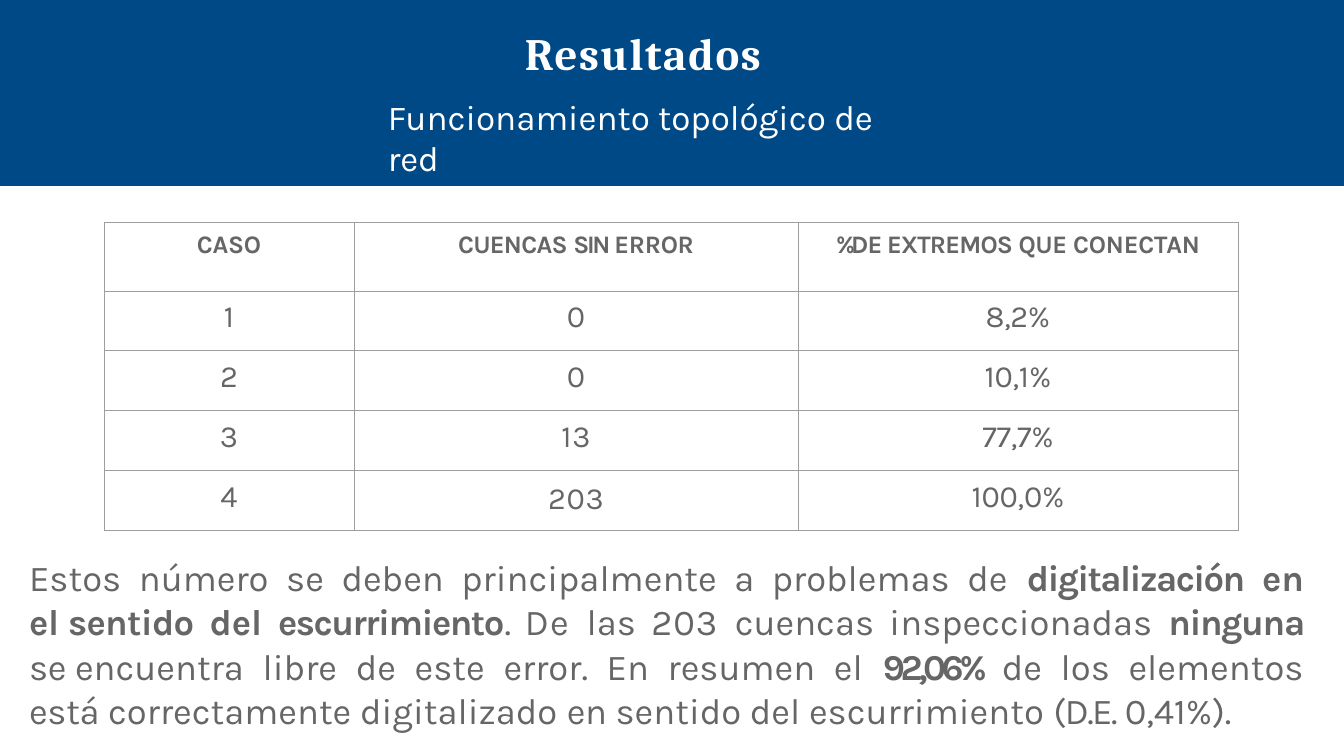
import pptx
import pptx.dml.color
import pptx.enum.shapes
import pptx.enum.text
import pptx.oxml
import pptx.oxml.ns
import pptx.util

ALIGN = pptx.enum.text.PP_ALIGN
HARD_SPACE = chr(160)
SLIDE = (1344, 756)
BAND = (0, 0, 1344, 186)
BLUE, WHITE, GREY, RULE = "004987", "FFFFFF", "666666", "9E9E9E"

TITLE = [("Resultados", True, 1.2)]
TITLE_BOX = (524, 25, 250, 56)
SUBTITLE = [("Funcionamiento topológico de ", False, 0), ("red", False, -0.2)]
SUBTITLE_BOX = (387, 94, 523, 44)

RESULTS_ORIGIN = (104, 222)
COLUMNS = (250, 444, 440)
ROWS = (69, 60, 60, 60, 60)
HEADINGS = [
    [("CASO", True, -0.2)],
    [("CUENCAS ", True, -0.5), ("SIN" + HARD_SPACE, True, -1.7), ("ERROR", True, -0.2)],
    [("%" + HARD_SPACE, True, -7.4), ("DE EXTREMOS ", True, -0.6),
     ("QUE ", True, -0.3), ("CONECTAN", True, -0.1)],
]
RESULTS = [
    [("1", 0.2), ("0", 0.2), ("8,2%", -0.2)],
    [("2", 0.2), ("0", 0.2), ("10,1%", -0.1)],
    [("3", 0.2), ("13", 0.5), ("77,7%", -0.1)],
    [("4", 0.2), ("203", 0.5), ("100,0%", -0.1)],
]

SUMMARY = [
    ("Estos número se deben principalmente a problemas de ", False, 0),
    ("digitalización ", True, -1.2), ("en ", True, 0), ("el" + HARD_SPACE, True, -0.2),
    ("sentido ", True, -0.5), ("del ", True, 0), ("escurrimiento", True, -1.1),
    (". ", False, -1.1), ("De ", False, 0.9), ("las ", False, 0), ("203 ", False, 0.7),
    ("cuencas inspeccionadas ", False, 0), ("ninguna ", True, -1),
    ("se" + HARD_SPACE, False, -0.2),
    ("encuentra libre de este error. En resumen el ", False, 0), ("92,06% ", True, -3.2),
    ("de los elementos ", False, 0), ("está" + HARD_SPACE, False, -0.2),
    ("correctamente digitalizado ", False, 0), ("en ", False, -0.2),
    ("sentido del escurrimiento ", False, 0), ("(D.E. ", False, -1.1), ("0,41%).", False, -0.1),
]
SUMMARY_BOX = (28, 554, 1276, 178)


def px(length):
    return pptx.util.Emu(round(length * 914400 / 100.8))


def colour(value):
    return pptx.dml.color.RGBColor.from_string(value)


def apply(target, formats):
    for key, value in formats.items():
        setattr(target, key, value)


def write(frame, runs, size, ink, face="Karla", **formats):
    paragraph = frame.paragraphs[0]
    apply(paragraph, formats)
    for words, bold, spacing in runs:
        run = paragraph.add_run()
        run.text = words
        apply(run.font, {"size": pptx.util.Pt(size), "name": face, "bold": bold})
        run.font.color.rgb = colour(ink)
        run._r.get_or_add_rPr().set("spc", str(round(spacing * 100)))
    return paragraph


def fill_box(shape, box, runs, size, ink, face="Karla", **formats):
    apply(shape, dict(zip(("left", "top", "width", "height"), map(px, box))))
    apply(shape.text_frame, {
        "margin_left": 0, "margin_top": px(1), "margin_right": 0, "margin_bottom": 0,
        "word_wrap": True, "vertical_anchor": pptx.enum.text.MSO_ANCHOR.TOP,
        "auto_size": pptx.enum.text.MSO_AUTO_SIZE.SHAPE_TO_FIT_TEXT,
    })
    paragraph = write(shape.text_frame, runs, size, ink, face, **formats)
    paragraph._p.get_or_add_pPr().set("marL", str(px(1)))


def rule_cell(cell):
    cell.fill.background()
    for place, side in enumerate(("lnL", "lnR", "lnT", "lnB")):
        cell._tc.get_or_add_tcPr().insert(place, pptx.oxml.parse_xml(
            f'<a:{side} {pptx.oxml.ns.nsdecls("a")} w="{pptx.util.Pt(0.75)}">'
            f'<a:solidFill><a:srgbClr val="{RULE}"/></a:solidFill></a:{side}>'))


def add_results(slide):
    table = slide.shapes.add_table(
        len(ROWS), len(COLUMNS), *map(px, (*RESULTS_ORIGIN, sum(COLUMNS), sum(ROWS)))).table
    apply(table, {"first_row": False, "horz_banding": False})
    for column, width in zip(table.columns, COLUMNS):
        column.width = px(width)
    for row, height in zip(table.rows, ROWS):
        row.height = px(height)
    values = [[[(words, False, spacing)] for words, spacing in line] for line in RESULTS]
    for r, line in enumerate([HEADINGS] + values):
        for c, runs in enumerate(line):
            cell = table.cell(r, c)
            lowered = runs[0][0] == "203"
            apply(cell, {"margin_left": 0, "margin_right": 0, "margin_bottom": 0,
                         "margin_top": px(10 if lowered else 8)})
            before = 6 if r == 0 else 7.3 if lowered else 5.8
            write(cell.text_frame, runs, 18 if r == 0 else 22, GREY,
                  alignment=ALIGN.CENTER, space_before=pptx.util.Pt(before))
            rule_cell(cell)


def main():
    deck = pptx.Presentation()
    apply(deck, dict(zip(("slide_width", "slide_height"), map(px, SLIDE))))
    slide = deck.slides.add_slide(deck.slide_layouts[5])

    band = slide.shapes.add_shape(pptx.enum.shapes.MSO_SHAPE.RECTANGLE, *map(px, BAND))
    band.shadow.inherit = False
    band.fill.solid()
    band.fill.fore_color.rgb = colour(BLUE)
    band.line.fill.background()
    slide.shapes._spTree.insert(2, band._element)

    before = pptx.util.Pt(1)
    fill_box(slide.shapes.title, TITLE_BOX, TITLE, 32, WHITE, "Cambria",
             alignment=ALIGN.LEFT, space_before=before)
    subtitle = slide.shapes.add_textbox(*map(px, SUBTITLE_BOX))
    fill_box(subtitle, SUBTITLE_BOX, SUBTITLE, 25, WHITE, space_before=before)
    add_results(slide)
    summary = slide.shapes.add_textbox(*map(px, SUMMARY_BOX))
    fill_box(summary, SUMMARY_BOX, SUMMARY, 26, GREY, alignment=ALIGN.JUSTIFY,
             line_spacing=1.01, space_before=pptx.util.Pt(0.7))
    deck.save("out.pptx")


if __name__ == "__main__":
    main()
